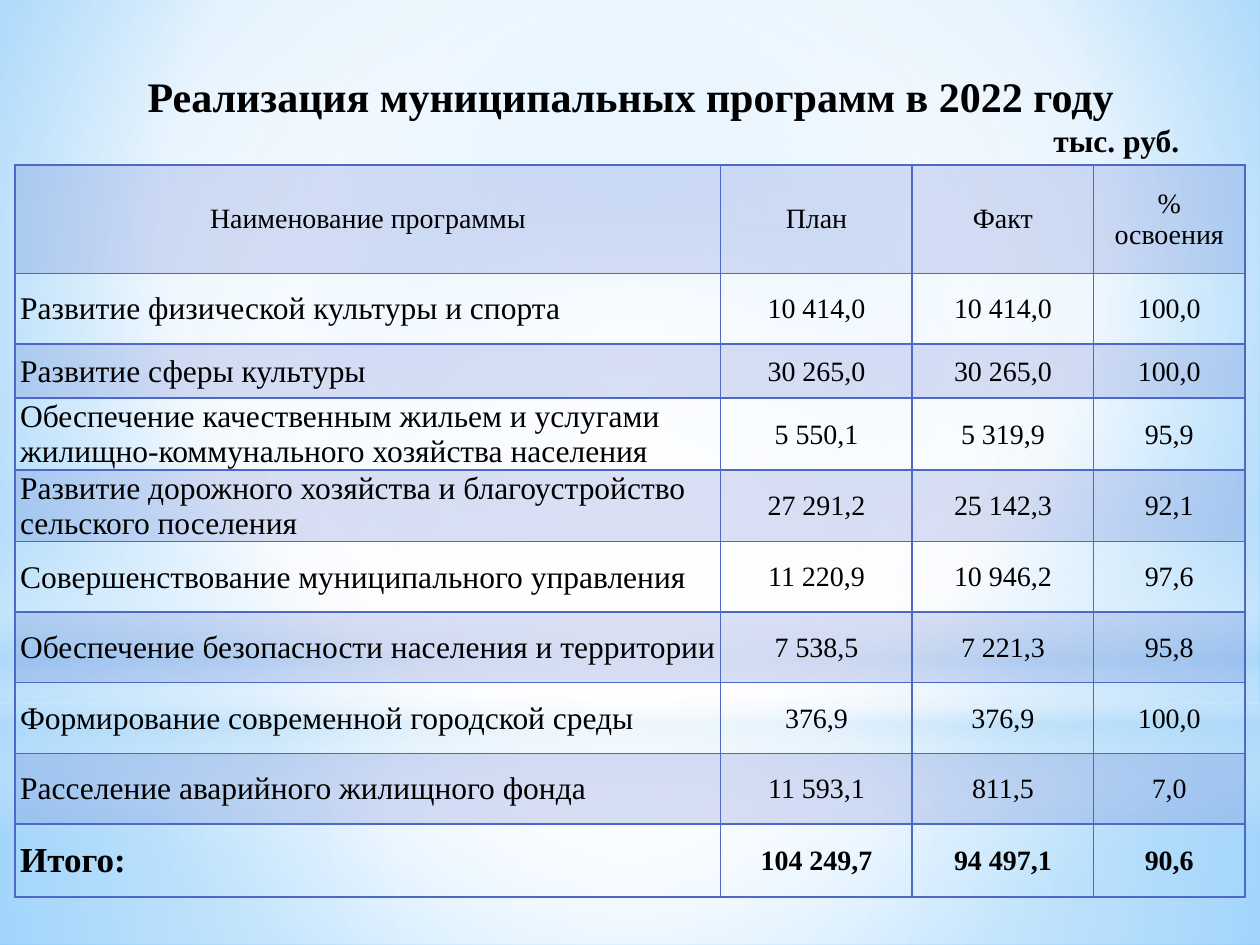
from pptx import Presentation
from pptx.dml.color import RGBColor
from pptx.enum.shapes import MSO_SHAPE
from pptx.enum.text import MSO_ANCHOR, MSO_AUTO_SIZE, PP_ALIGN
from pptx.oxml import parse_xml
from pptx.oxml.ns import nsdecls, qn
from pptx.util import Inches, Pt

HUES = {"ink": "000000", "line": "4E67C8", "white": "FFFFFF",
        "pale": "B4DCFA", "sky": "9ED5FF", "deep": "5BB9FF"}
FONT = "Times New Roman"
COLS = [5.6, 1.52, 1.44, 1.2]
HIGH = [0.86, 0.56, 0.43, 0.57, 0.57, 0.56, 0.56, 0.56, 0.56, 0.58]
ROWS = [
    ("Наименование программы", "План", "Факт", "% освоения"),
    ("Развитие физической культуры и спорта", "10 414,0", "10 414,0", "100,0"),
    ("Развитие сферы культуры", "30 265,0", "30 265,0", "100,0"),
    ("Обеспечение качественным жильем и услугами жилищно-коммунального хозяйства населения",
     "5 550,1", "5 319,9", "95,9"),
    ("Развитие дорожного хозяйства и благоустройство сельского поселения",
     "27 291,2", "25 142,3", "92,1"),
    ("Совершенствование муниципального управления", "11 220,9", "10 946,2", "97,6"),
    ("Обеспечение безопасности населения и территории", "7 538,5", "7 221,3", "95,8"),
    ("Формирование современной городской среды", "376,9", "376,9", "100,0"),
    ("Расселение аварийного жилищного фонда", "11 593,1", "811,5", "7,0"),
    ("Итого:", "104 249,7", "94 497,1", "90,6"),
]


def write(para, text, size=16, bold=False, align=PP_ALIGN.CENTER):
    para.alignment = align
    run = para.add_run()
    run.text = text
    font = run.font
    font.name, font.size, font.bold = FONT, Pt(size), bold
    font.color.rgb = RGBColor.from_string(HUES["ink"])


def inset(item, left, top, right, bottom):
    item.margin_left, item.margin_top = Inches(left), Inches(top)
    item.margin_right, item.margin_bottom = Inches(right), Inches(bottom)


def tint(hue, alpha):
    return (f'<a:srgbClr val="{HUES[hue]}">'
            f'<a:alpha val="{alpha * 1000}"/></a:srgbClr>')


def blend(root, stops, focus=None):
    marks = "".join(f'<a:gs pos="{pos * 1000}">{tint(hue, alpha)}</a:gs>'
                    for pos, hue, alpha in stops)
    if focus:
        sides = " ".join(f'{side}="{val * 1000}"' for side, val in zip("ltrb", focus))
        way = f'<a:path path="circle"><a:fillToRect {sides}/></a:path>'
    else:
        way = '<a:lin ang="5400000" scaled="0"/>'
    old = root.find(".//" + qn("a:gradFill"))
    new = parse_xml(f'<a:gradFill {nsdecls("a")} rotWithShape="1">'
                    f'<a:gsLst>{marks}</a:gsLst>{way}</a:gradFill>')
    old.getparent().replace(old, new)


class Deck:
    def __init__(self):
        self.file = Presentation()
        self.file.slide_width, self.file.slide_height = Inches(10), Inches(7.5)
        self.slide = self.file.slides.add_slide(self.file.slide_layouts[5])

    def back(self, stops, focus):
        self.slide.background.fill.gradient()
        blend(self.slide.element, stops, focus)

    def glow(self, top, high, stops, focus=None, kind=MSO_SHAPE.RECTANGLE):
        shape = self.slide.shapes.add_shape(
            kind, 0, Inches(top), Inches(10), Inches(high))
        shape.shadow.inherit = False
        shape.line.fill.background()
        shape.fill.gradient()
        blend(shape.element, stops, focus)

    def title(self, text, unit):
        shape = self.slide.shapes.title
        shape.left, shape.top = Inches(0.55), Inches(0.47)
        shape.width, shape.height = Inches(8.91), Inches(0.47)
        frame = shape.text_frame
        frame.word_wrap, frame.auto_size = True, MSO_AUTO_SIZE.NONE
        frame.vertical_anchor = MSO_ANCHOR.TOP
        inset(frame, 0.1, 0.09, 0.1, 0.05)
        write(frame.paragraphs[0], text, size=24, bold=True)
        write(frame.add_paragraph(), unit, size=18, bold=True, align=PP_ALIGN.RIGHT)
        for para in frame.paragraphs:
            para.space_before = Pt(0)
        self.slide.shapes.element.append(shape.element)

    def cell(self, cell, text, row, col):
        head, total, name = row == 0, row == len(ROWS) - 1, col == 0
        cell.vertical_anchor = MSO_ANCHOR.MIDDLE
        if head:
            inset(cell, 0.1, 0.05, 0.1, 0.05)
        else:
            inset(cell, 0.04 if name else 0.01, 0.01, 0.01, 0)
        size = 16 if head or not name else 20 if total else 18
        align = PP_ALIGN.LEFT if name and not head else PP_ALIGN.CENTER
        write(cell.text_frame.paragraphs[0], text, size=size, bold=total, align=align)
        props = cell._tc.get_or_add_tcPr()
        for side in ("lnL", "lnR", "lnT", "lnB"):
            props.append(parse_xml(
                f'<a:{side} {nsdecls("a")} w="12700"><a:solidFill>'
                f'{tint("line", 100)}</a:solidFill></a:{side}>'))
        if row % 2:
            cell.fill.background()
        else:
            props.append(parse_xml(
                f'<a:solidFill {nsdecls("a")}>{tint("line", 20)}</a:solidFill>'))

    def table(self):
        grid = self.slide.shapes.add_table(
            len(ROWS), len(COLS), Inches(0.12), Inches(1.31),
            Inches(sum(COLS)), Inches(sum(HIGH))).table
        grid.first_row = grid.horz_banding = False
        for col, wide in zip(grid.columns, COLS):
            col.width = Inches(wide)
        for row, high in zip(grid.rows, HIGH):
            row.height = Inches(high)
        for row, texts in enumerate(ROWS):
            for col, text in enumerate(texts):
                self.cell(grid.cell(row, col), text, row, col)


def main():
    deck = Deck()
    mid = (50, 50, 50, 50)
    deck.back([(0, "sky", 100), (60, "white", 100), (100, "deep", 100)],
              (20, 10, 20, 60))
    deck.glow(5.58, 1.92,
              [(0, "white", 91), (37, "white", 76), (100, "pale", 79)], mid)
    deck.glow(0, 5.58,
              [(0, "white", 89), (48, "white", 62), (100, "pale", 79)], mid)
    deck.glow(4.12, 2.5,
              [(0, "white", 0), (29, "white", 30), (45, "pale", 40),
               (55, "white", 26), (65, "pale", 60), (100, "white", 0)])
    deck.glow(1.75, 5.58, [(0, "white", 100), (56, "white", 0)], mid,
              kind=MSO_SHAPE.OVAL)
    deck.title("Реализация муниципальных программ в 2022 году", "тыс. руб.")
    deck.table()
    deck.file.save("out.pptx")


if __name__ == "__main__":
    main()
